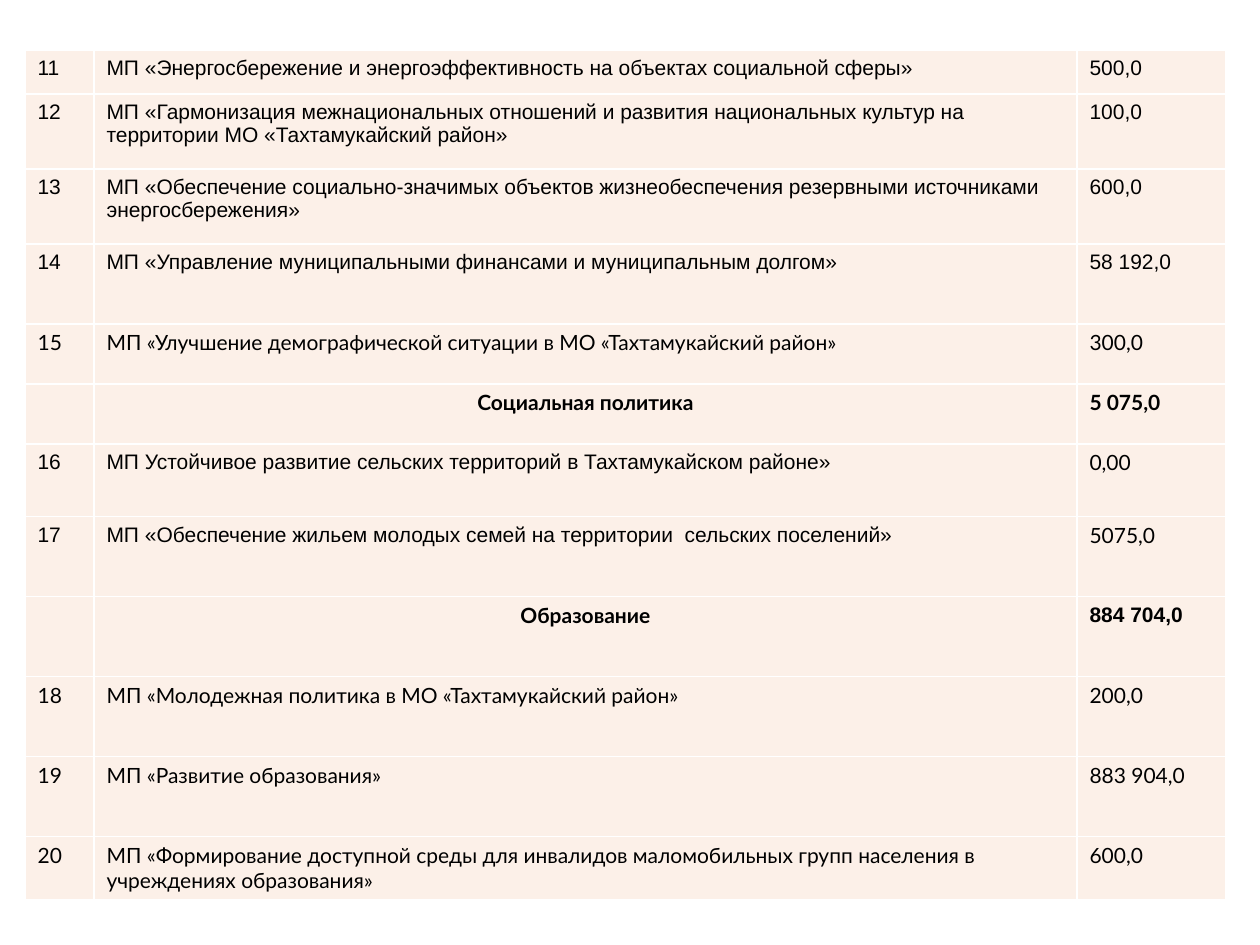
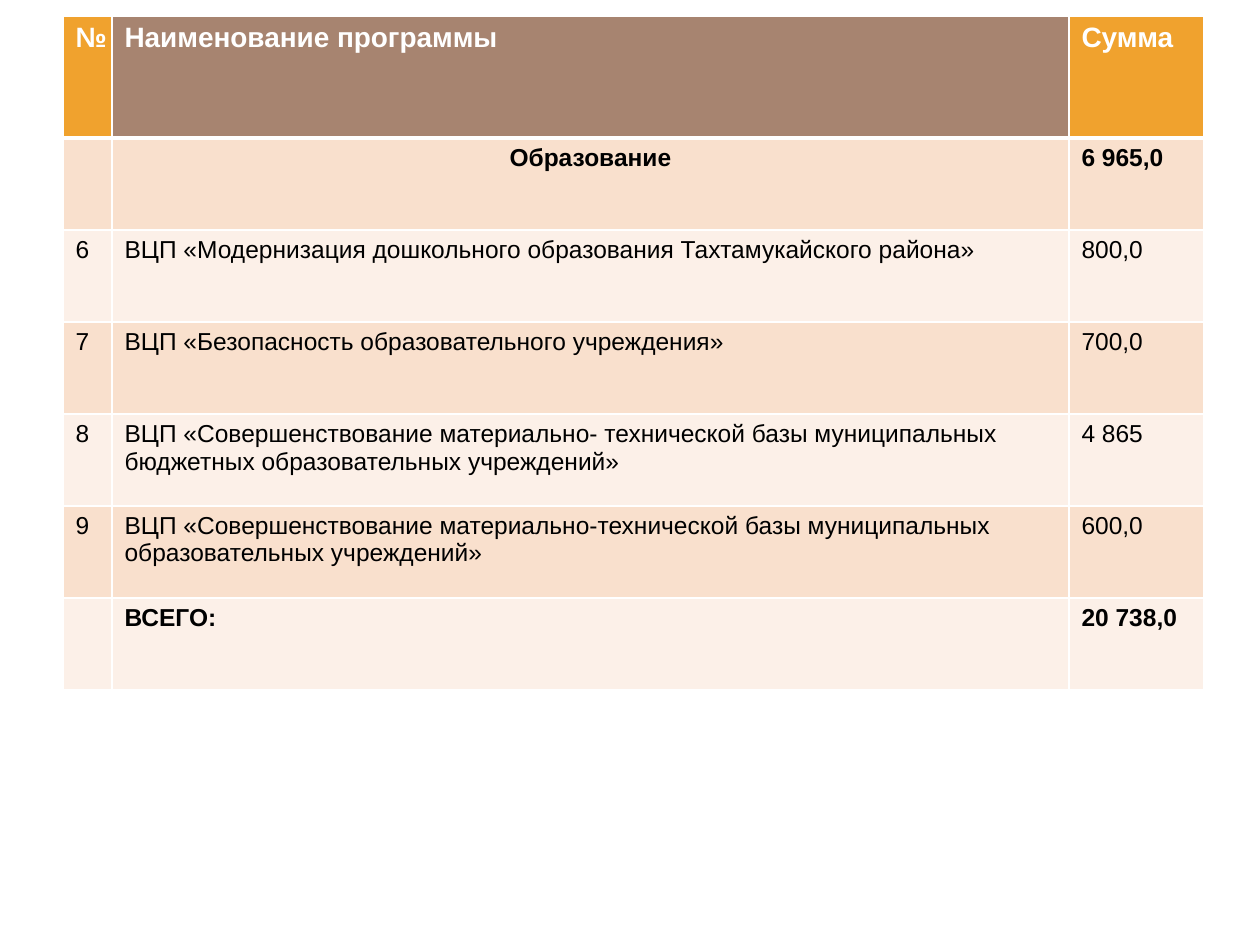
"""Build two slides of municipal programme budget tables."""
from dataclasses import dataclass

from lxml import etree
from pptx import Presentation
from pptx.dml.color import RGBColor
from pptx.enum.text import PP_ALIGN
from pptx.oxml.ns import qn
from pptx.util import Emu, Pt

LEFT, CENTER = PP_ALIGN.LEFT, PP_ALIGN.CENTER
PX = 914400 / 126


@dataclass(frozen=True)
class Theme:
    text: str = "000000"
    white: str = "FFFFFF"
    pale: str = "FCF0E8"
    peach: str = "F9E0CD"
    orange: str = "F0A22E"
    brown: str = "A78470"
    sans: str = "Arial"
    alt: str = "Lato"
    programme_size: int = 12
    target_size: int = 14
    header_size: int = 16
    rule: int = 1
    header_rule: int = 3


T = Theme()
SANS = (T.sans,) * 3
ALT = (T.alt,) * 3
SANS_ALT_SUM = (T.sans, T.sans, T.alt)
ALT_SANS_SUM = (T.alt, T.alt, T.sans)

PROGRAMMES = [
    (44, SANS, "11", "МП «Энергосбережение и энергоэффективность на объектах социальной сферы»", "500,0"),
    (75, SANS, "12", "МП «Гармонизация межнациональных отношений и развития национальных культур на "
     "территории МО «Тахтамукайский район»", "100,0"),
    (75, SANS, "13", "МП «Обеспечение социально-значимых объектов жизнеобеспечения резервными источниками "
     "энергосбережения»", "600,0"),
    (80, SANS, "14", "МП «Управление муниципальными финансами и муниципальным долгом»", "58 192,0"),
    (60, ALT, "15", "МП «Улучшение демографической ситуации в МО «Тахтамукайский район»", "300,0"),
    (60, ALT, "", "Социальная политика", "5 075,0"),
    (73, SANS_ALT_SUM, "16", "МП Устойчивое развитие сельских территорий в Тахтамукайском районе»", "0,00"),
    (80, SANS_ALT_SUM, "17", "МП «Обеспечение жильем молодых семей на территории  сельских поселений»", "5075,0"),
    (80, ALT_SANS_SUM, "", "Образование", "884 704,0"),
    (80, ALT, "18", "МП «Молодежная политика в МО «Тахтамукайский район»", "200,0"),
    (80, ALT, "19", "МП «Развитие образования»", "883 904,0"),
    (62, ALT, "20", "МП «Формирование доступной среды для инвалидов маломобильных групп населения в "
     "учреждениях образования»", "600,0"),
]

HEADER = (122, SANS, "№", "Наименование программы", "Сумма")
TARGETS = [(92, SANS, *row) for row in (
    ("", "Образование", "6 965,0"),
    ("6", "ВЦП «Модернизация дошкольного образования Тахтамукайского района»", "800,0"),
    ("7", "ВЦП «Безопасность образовательного учреждения»", "700,0"),
    ("8", "ВЦП «Совершенствование материально- технической базы муниципальных бюджетных "
     "образовательных учреждений»", "4 865"),
    ("9", "ВЦП «Совершенствование материально-технической базы муниципальных "
     "образовательных учреждений»", "600,0"),
    ("", "ВСЕГО:", "20 738,0"),
)]
SECTIONS = {"Социальная политика", "Образование"}


def px(n):
    return Emu(round(n * PX))


def set_borders(cell, **widths):
    tc_pr = cell._tc.get_or_add_tcPr()
    for side in "LRTB":
        width = widths.get(side, T.rule)
        ln = etree.SubElement(tc_pr, qn(f"a:ln{side}"), w=str(Pt(width)))
        fill = etree.SubElement(ln, qn("a:solidFill"))
        etree.SubElement(fill, qn("a:srgbClr"), val=T.white)


def set_text(cell, text, *, font, size, color=T.text, bold=False, align=LEFT):
    p = cell.text_frame.paragraphs[0]
    p.alignment = align
    r = p.add_run()
    r.text = text
    r.font.name = font
    r.font.size = Pt(size)
    r.font.bold = bold
    r.font.color.rgb = RGBColor.from_string(color)


def add_budget_table(s, left, top, col_widths, rows, *, size, fills, header=None):
    lines = [header, *rows] if header else rows
    frame = s.shapes.add_table(len(lines), len(col_widths), px(left), px(top),
                               px(sum(col_widths)), px(sum(row[0] for row in lines)))
    table = frame.table
    table.first_row = bool(header)
    table.horz_banding = False
    for column, width in zip(table.columns, col_widths):
        column.width = px(width)
    for i, (height, fonts, *texts) in enumerate(lines):
        table.rows[i].height = px(height)
        is_header = bool(header) and i == 0
        below_header = bool(header) and i == 1
        colors = (T.orange, T.brown, T.orange) if is_header else (fills[i % len(fills)],) * 3
        for j, (text, font, color) in enumerate(zip(texts, fonts, colors)):
            cell = table.cell(i, j)
            set_borders(cell, B=T.header_rule if is_header else T.rule,
                        T=T.header_rule if below_header else T.rule)
            cell.fill.solid()
            cell.fill.fore_color.rgb = RGBColor.from_string(color)
            if text:
                set_text(cell, text, font=font,
                         size=T.header_size if is_header else size,
                         color=T.white if is_header else T.text,
                         bold=is_header or not texts[0],
                         align=CENTER if text in SECTIONS else LEFT)


def main():
    prs = Presentation()
    prs.slide_width, prs.slide_height = px(1260), px(945)
    blank = prs.slide_layouts[6]
    add_budget_table(prs.slides.add_slide(blank), 25, 50, (69, 983, 149), PROGRAMMES,
                     size=T.programme_size, fills=(T.pale,))
    add_budget_table(prs.slides.add_slide(blank), 63, 16, (49, 957, 135), TARGETS,
                     size=T.target_size, fills=(T.pale, T.peach), header=HEADER)
    prs.save("out.pptx")


if __name__ == "__main__":
    main()
